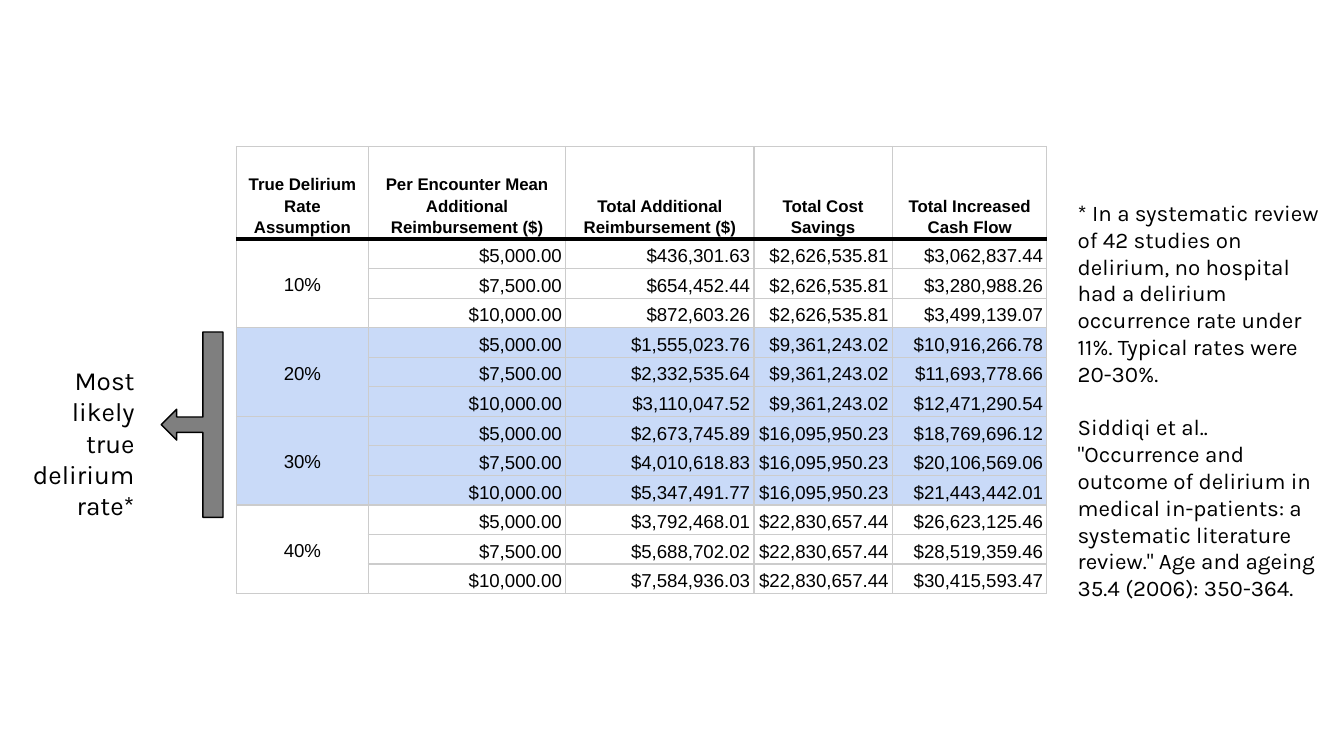
from lxml.etree import SubElement
from pptx import Presentation
from pptx.dml.color import RGBColor
from pptx.enum.shapes import MSO_SHAPE
from pptx.enum.text import MSO_ANCHOR, PP_ALIGN
from pptx.oxml.ns import qn
from pptx.util import Inches, Pt

BLACK, GRID, HIGHLIGHT, GRAY = "000000", "CCCCCC", "C9DAF8", "7F7F7F"

COLUMN_WIDTHS = [0.98, 1.47, 1.4, 1.03, 1.15]
TABLE_HEIGHT, HEADER_HEIGHT = 3.31, 0.69
HEADINGS = [
    "True Delirium Rate Assumption",
    "Per Encounter Mean Additional Reimbursement ($)",
    "Total Additional Reimbursement ($)",
    "Total Cost Savings",
    "Total Increased Cash Flow",
]
PER_ENCOUNTER = ["$5,000.00", "$7,500.00", "$10,000.00"]
# rate, cost savings, additional reimbursements, increased cash flows, most likely
RATE_GROUPS = [
    ("10%", "$2,626,535.81", ["$436,301.63", "$654,452.44", "$872,603.26"],
     ["$3,062,837.44", "$3,280,988.26", "$3,499,139.07"], False),
    ("20%", "$9,361,243.02", ["$1,555,023.76", "$2,332,535.64", "$3,110,047.52"],
     ["$10,916,266.78", "$11,693,778.66", "$12,471,290.54"], True),
    ("30%", "$16,095,950.23", ["$2,673,745.89", "$4,010,618.83", "$5,347,491.77"],
     ["$18,769,696.12", "$20,106,569.06", "$21,443,442.01"], True),
    ("40%", "$22,830,657.44", ["$3,792,468.01", "$5,688,702.02", "$7,584,936.03"],
     ["$26,623,125.46", "$28,519,359.46", "$30,415,593.47"], False),
]
STUDY_NOTES = [
    "* In a systematic review of 42 studies on delirium, no hospital had a delirium "
    "occurrence rate under 11%. Typical rates were 20-30%.",
    'Siddiqi et al.. "Occurrence and outcome of delirium in medical in-patients: '
    'a systematic literature review." Age and ageing 35.4 (2006): 350-364.',
]


def color(hex_value):
    return RGBColor.from_string(hex_value)


def add_run(paragraph, text, font, size, bold=False):
    run = paragraph.add_run()
    run.text = text
    run.font.name = font
    run.font.size = Pt(size)
    run.font.bold = bold
    run.font.color.rgb = color(BLACK)


def add_text(slide, box, paragraphs, size, align=PP_ALIGN.LEFT, gap=0):
    frame = slide.shapes.add_textbox(*map(Inches, box)).text_frame
    frame.word_wrap = True
    frame.margin_left = frame.margin_right = Inches(0.1)
    frame.margin_top = frame.margin_bottom = Inches(0.1)
    for index, text in enumerate(paragraphs):
        paragraph = frame.add_paragraph() if index else frame.paragraphs[0]
        paragraph.alignment = align
        if index:
            paragraph.space_before = Pt(gap)
        add_run(paragraph, text, "Karla", size)


def set_borders(cell, top, bottom):
    """Draw all four sides; top and bottom are (colour, points) pairs."""
    properties = cell._tc.get_or_add_tcPr()
    sides = {"L": (GRID, 0.75), "R": (GRID, 0.75), "T": top, "B": bottom}
    for index, (side, (hex_value, points)) in enumerate(sides.items()):
        line = SubElement(properties, qn(f"a:ln{side}"), w=str(Pt(points)))
        fill = SubElement(line, qn("a:solidFill"))
        SubElement(fill, qn("a:srgbClr"), val=hex_value)
        properties.insert(index, line)


def style_cell(cell, row, highlighted):
    cell.margin_left = cell.margin_right = Inches(0.03)
    cell.margin_top = cell.margin_bottom = Pt(1)
    if highlighted:
        cell.fill.solid()
        cell.fill.fore_color.rgb = color(HIGHLIGHT)
    else:
        cell.fill.background()
    thin, thick = (GRID, 0.75), (BLACK, 2.25)
    set_borders(cell, thick if row == 1 else thin, thick if row == 0 else thin)


def write_cell(cell, text, align, anchor=MSO_ANCHOR.BOTTOM, size=10, bold=False):
    cell.vertical_anchor = anchor
    paragraph = cell.text_frame.paragraphs[0]
    paragraph.alignment = align
    paragraph.line_spacing = 1.15
    add_run(paragraph, text, "Arial", size, bold)


def add_savings_table(slide, left, top):
    group_size = len(PER_ENCOUNTER)
    body_rows = group_size * len(RATE_GROUPS)
    row_height = (TABLE_HEIGHT - HEADER_HEIGHT) / body_rows
    table = slide.shapes.add_table(
        body_rows + 1, len(HEADINGS), Inches(left), Inches(top),
        Inches(sum(COLUMN_WIDTHS)), Inches(TABLE_HEIGHT),
    ).table
    table.first_row = table.horz_banding = False
    for column, width in zip(table.columns, COLUMN_WIDTHS):
        column.width = Inches(width)
    for index, row in enumerate(table.rows):
        row.height = Inches(row_height if index else HEADER_HEIGHT)
        highlighted = index > 0 and RATE_GROUPS[(index - 1) // group_size][-1]
        for cell in row.cells:
            style_cell(cell, index, highlighted)

    for column, heading in enumerate(HEADINGS):
        write_cell(table.cell(0, column), heading, PP_ALIGN.CENTER, size=9, bold=True)
    for group, (rate, savings, reimbursements, cash_flows, _) in enumerate(RATE_GROUPS):
        first = 1 + group * group_size
        rate_cell = table.cell(first, 0)
        rate_cell.merge(table.cell(first + group_size - 1, 0))
        write_cell(rate_cell, rate, PP_ALIGN.CENTER, MSO_ANCHOR.MIDDLE)
        amounts = zip(PER_ENCOUNTER, reimbursements, [savings] * group_size, cash_flows)
        for row, values in enumerate(amounts, first):
            for column, value in enumerate(values, 1):
                write_cell(table.cell(row, column), value, PP_ALIGN.RIGHT)


def add_likely_rate_callout(slide, left, top):
    arrow = slide.shapes.add_shape(
        MSO_SHAPE.LEFT_ARROW_CALLOUT,
        Inches(left + 1.12), Inches(top), Inches(0.46), Inches(1.38))
    for index, value in enumerate([0.25, 0.25, 0.25, 0.325]):
        arrow.adjustments[index] = value
    arrow.shadow.inherit = False
    arrow.fill.solid()
    arrow.fill.fore_color.rgb = color(GRAY)
    arrow.line.color.rgb = color(BLACK)
    arrow.line.width = Pt(0.75)
    add_text(slide, (left, top + 0.14, 1.02, 1.1),
             ["Most likely true delirium rate*"], 14, PP_ALIGN.RIGHT)


def main():
    presentation = Presentation()
    presentation.slide_width = Inches(10)
    presentation.slide_height = Inches(10 * 9 / 16)
    slide = presentation.slides.add_slide(presentation.slide_layouts[6])
    add_likely_rate_callout(slide, 0.08, 2.47)
    add_text(slide, (7.92, 1.38, 2.08, 3.15), STUDY_NOTES, 12, gap=14)
    add_savings_table(slide, 1.76, 1.09)
    presentation.save("out.pptx")


if __name__ == "__main__":
    main()
